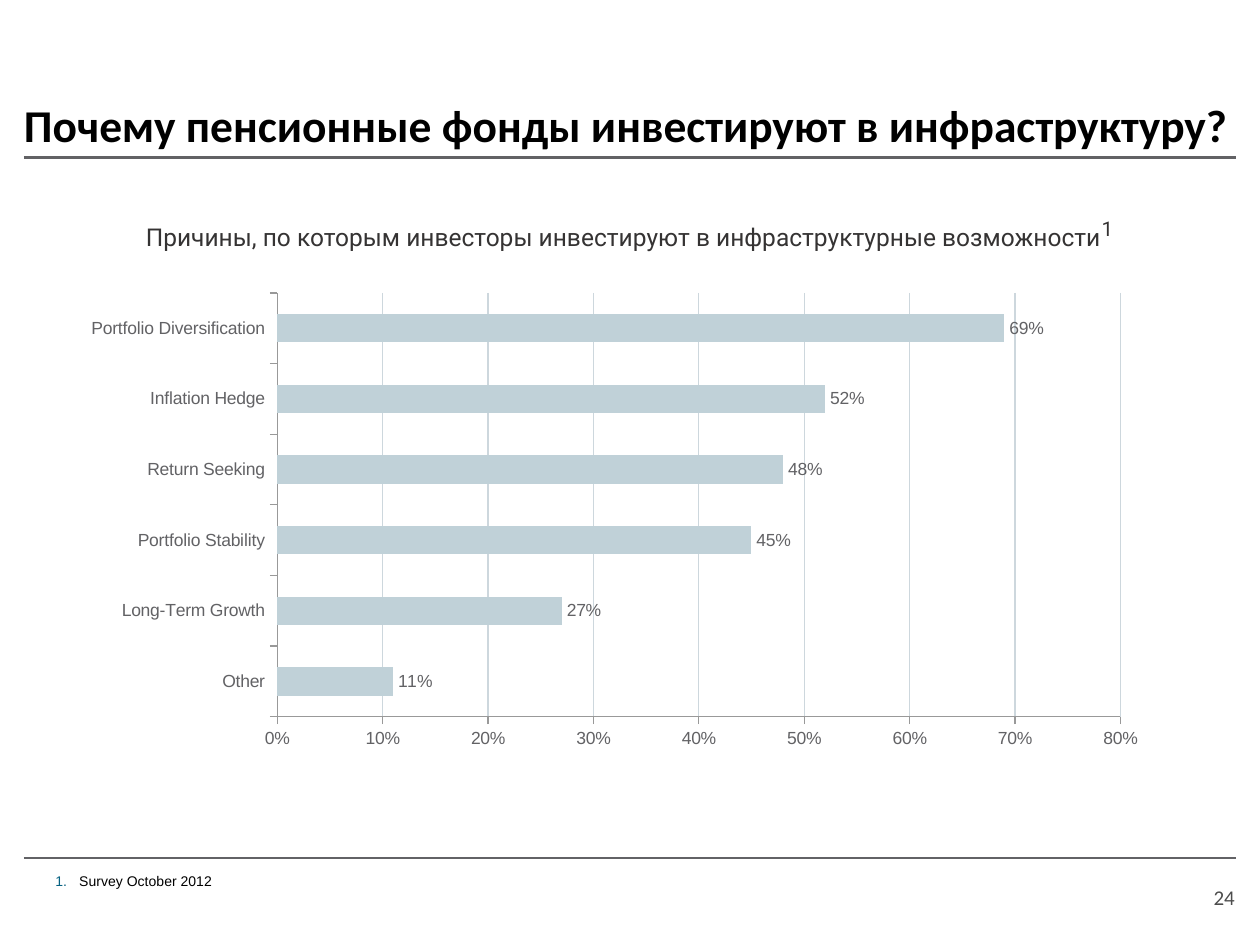
from lxml import etree
from pptx import Presentation
from pptx.chart.data import CategoryChartData
from pptx.dml.color import RGBColor
from pptx.enum.chart import XL_CHART_TYPE, XL_LABEL_POSITION, XL_TICK_MARK
from pptx.enum.shapes import MSO_CONNECTOR
from pptx.enum.text import MSO_ANCHOR, PP_ALIGN
from pptx.oxml.ns import qn
from pptx.util import Inches, Pt

BAR_CLUSTERED = XL_CHART_TYPE.BAR_CLUSTERED
OUTSIDE_END = XL_LABEL_POSITION.OUTSIDE_END
TICK_OUTSIDE = XL_TICK_MARK.OUTSIDE
STRAIGHT = MSO_CONNECTOR.STRAIGHT
TOP, BOTTOM = MSO_ANCHOR.TOP, MSO_ANCHOR.BOTTOM
LEFT, CENTER, RIGHT = PP_ALIGN.LEFT, PP_ALIGN.CENTER, PP_ALIGN.RIGHT

BLACK = RGBColor(0x00, 0x00, 0x00)
DARK = RGBColor(0x35, 0x33, 0x33)
PAGE_GRAY = RGBColor(0x4D, 0x4D, 0x4D)
GRAY = RGBColor(0x62, 0x62, 0x65)
AXIS_GRAY = RGBColor(0x99, 0x99, 0x99)
GRID = RGBColor(0xCD, 0xD7, 0xDD)
BAR = RGBColor(0xC0, 0xD1, 0xD8)
TEAL = RGBColor(0x07, 0x62, 0x82)

REASONS = [
    ("Other", 0.11),
    ("Long-Term Growth", 0.27),
    ("Portfolio Stability", 0.45),
    ("Return Seeking", 0.48),
    ("Inflation Hedge", 0.52),
    ("Portfolio Diversification", 0.69),
]


def style_run(run, size, font, color, bold=False):
    run.font.size = Pt(size)
    run.font.name = font
    run.font.color.rgb = color
    run.font.bold = bold


def add_text(slide, box, text, size, font, color, align=LEFT, anchor=TOP,
             insets=(0.1, 0.05), bold=False):
    frame = slide.shapes.add_textbox(*map(Inches, box)).text_frame
    frame.word_wrap = True
    frame.vertical_anchor = anchor
    frame.margin_left = frame.margin_right = Inches(insets[0])
    frame.margin_top = frame.margin_bottom = Inches(insets[1])
    frame.text = text
    paragraph = frame.paragraphs[0]
    paragraph.alignment = align
    style_run(paragraph.runs[0], size, font, color, bold)
    return paragraph


def add_rule(slide, y, width):
    rule = slide.shapes.add_connector(
        STRAIGHT, Inches(0.19), Inches(y), Inches(9.81), Inches(y))
    rule.line.color.rgb = GRAY
    rule.line.width = Pt(width)
    etree.SubElement(rule._element.spPr, qn("a:effectLst"))


def add_superscript(paragraph, text, size, font, color):
    run = paragraph.add_run()
    run.text = text
    style_run(run, size, font, color)
    run.font._element.set("baseline", "30000")


def number_paragraph(paragraph, color, indent):
    properties = paragraph._p.get_or_add_pPr()
    properties.set("marL", str(Inches(indent)))
    properties.set("indent", str(-Inches(indent)))
    bullet_color = etree.SubElement(properties, qn("a:buClr"))
    etree.SubElement(bullet_color, qn("a:srgbClr"), val=str(color))
    etree.SubElement(properties, qn("a:buFont"), typeface="Arial")
    etree.SubElement(properties, qn("a:buAutoNum"), type="arabicPeriod")


def style_axis(axis):
    axis.major_tick_mark = TICK_OUTSIDE
    axis.minor_tick_mark = XL_TICK_MARK.NONE
    axis.format.line.color.rgb = AXIS_GRAY
    axis.format.line.width = Pt(0.75)
    axis.tick_labels.font.name = "Arial"
    axis.tick_labels.font.size = Pt(10)
    axis.tick_labels.font.color.rgb = GRAY


def set_plot_position(chart, x, y, w, h):
    plot_area = chart._chartSpace.chart.plotArea
    for old_layout in plot_area.findall(qn("c:layout")):
        plot_area.remove(old_layout)
    layout = etree.Element(qn("c:layout"))
    plot_area.insert(0, layout)
    manual = etree.SubElement(layout, qn("c:manualLayout"))
    settings = [("layoutTarget", "inner"), ("xMode", "edge"), ("yMode", "edge"),
                ("x", x), ("y", y), ("w", w), ("h", h)]
    for tag, value in settings:
        etree.SubElement(manual, qn(f"c:{tag}"), val=str(value))


def add_reasons_chart(slide):
    data = CategoryChartData(number_format="0%")
    data.categories = [reason for reason, _ in REASONS]
    data.add_series("Series 1", [share for _, share in REASONS])
    chart = slide.shapes.add_chart(
        BAR_CLUSTERED, *map(Inches, (0.55, 2.25, 8.69, 3.78)), data).chart
    chart.has_legend = False
    chart.has_title = False
    chart.font.name = "Arial"
    chart.font.size = Pt(10)
    chart.font.color.rgb = GRAY
    set_plot_position(chart, 0.19, 0.02, 0.77, 0.89)

    # Axes
    style_axis(chart.category_axis)
    shares = chart.value_axis
    style_axis(shares)
    shares.minimum_scale, shares.maximum_scale, shares.major_unit = 0, 0.8, 0.1
    shares.tick_labels.number_format = "0%"
    shares.tick_labels.number_format_is_linked = False
    shares.major_gridlines.format.line.color.rgb = GRID
    shares.major_gridlines.format.line.width = Pt(0.75)

    # Bars and their labels
    plot = chart.plots[0]
    plot.gap_width = 150
    plot.vary_by_categories = False
    bars = plot.series[0]
    bars.format.fill.solid()
    bars.format.fill.fore_color.rgb = BAR
    labels = bars.data_labels
    labels.show_value = True
    labels.number_format = "0%"
    labels.number_format_is_linked = False
    labels.position = OUTSIDE_END
    labels.font.name = "Arial"
    labels.font.size = Pt(10)
    labels.font.color.rgb = GRAY


def main():
    prs = Presentation()
    prs.slide_width, prs.slide_height = Inches(10), Inches(7.5)
    slide = prs.slides.add_slide(prs.slide_layouts[6])

    # Frame: rules and page number
    add_rule(slide, 6.81, 1)
    add_rule(slide, 1.25, 1.5)
    add_text(slide, (8.89, 7.04, 0.91, 0.18), "24", 12, "Calibri", PAGE_GRAY,
             RIGHT, BOTTOM, insets=(0, 0))

    # Headings
    add_text(slide, (0.19, 0.6, 9.62, 0.65),
             "Почему пенсионные фонды инвестируют в инфраструктуру?",
             26, "Calibri", BLACK, anchor=BOTTOM, insets=(0, 0.05), bold=True)
    subtitle = add_text(
        slide, (0.44, 1.63, 9.15, 5.47),
        "Причины, по которым инвесторы инвестируют в инфраструктурные возможности",
        14, "Roboto", DARK, CENTER)
    subtitle.space_after = Pt(6)
    add_superscript(subtitle, "1 ", 20, "Roboto", DARK)

    # Footnote
    footnote = add_text(slide, (0.34, 6.76, 9.25, 0.35), "Survey October 2012",
                        8, "Arial", BLACK, anchor=BOTTOM)
    number_paragraph(footnote, TEAL, 0.19)

    add_reasons_chart(slide)
    prs.save("out.pptx")


if __name__ == "__main__":
    main()
